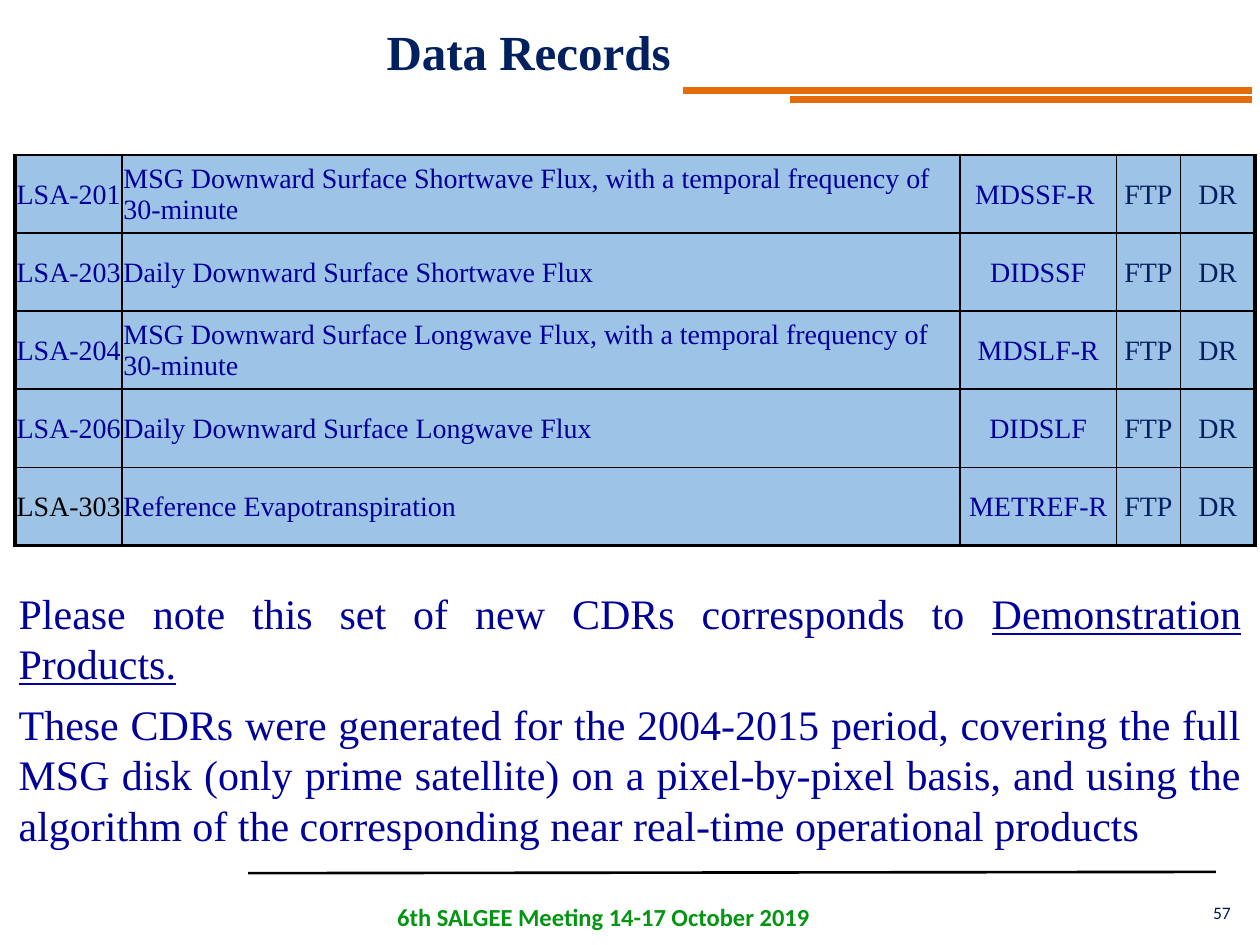
from dataclasses import dataclass

from lxml import etree
from pptx import Presentation, util as u
from pptx.dml.color import RGBColor
from pptx.enum import shapes, text
from pptx.oxml import ns


@dataclass(frozen=True)
class Theme:
    serif: str = "Times New Roman"
    sans: str = "Calibri"
    navy: str = "002060"
    blue: str = "000099"
    black: str = "000000"
    orange: str = "E46C0A"
    green: str = "059513"
    number: str = "00194C"
    cell: str = "9DC3E6"
    title_size: int = 28
    body_size: int = 24
    table_size: int = 16
    footer_size: int = 14
    number_size: int = 10
    thin: float = 1
    thick: float = 2.25


THEME = Theme()
ALIGN = text.PP_ALIGN
COLUMN_WIDTHS = (0.85, 6.65, 1.24, 0.51, 0.59)
ROW_HEIGHT = 0.62
RECORDS = (
    ("LSA-201", "MSG Downward Surface Shortwave Flux, with a temporal frequency of 30-minute", "MDSSF-R "),
    ("LSA-203", "Daily Downward Surface Shortwave Flux", "DIDSSF"),
    ("LSA-204", "MSG Downward Surface Longwave Flux, with a temporal frequency of 30-minute", "MDSLF-R"),
    ("LSA-206", "Daily Downward Surface Longwave Flux", "DIDSLF"),
    ("LSA-303", "Reference Evapotranspiration", "METREF-R"),
)
NOTES = (
    (("Please note this set of new CDRs corresponds to ", False), ("Demonstration Products.", True)),
    (("These CDRs were generated for the 2004-2015 period, covering the full MSG disk "
      "(only prime satellite) on a pixel-by-pixel basis, and using the algorithm of the "
      "corresponding near real-time operational products ", False),),
)


def style_font(font, name, size, color, bold=False):
    font.name = name
    font.size = u.Pt(size)
    font.color.rgb = RGBColor.from_string(color)
    font.bold = bold


def add_box(page, left, top, width, height, wrap=True):
    box = page.shapes.add_textbox(*map(u.Inches, (left, top, width, height)))
    box.text_frame.word_wrap = wrap
    return box.text_frame


def add_label(page, place, words, font, align=ALIGN.CENTER, wrap=True):
    frame = add_box(page, *place, wrap=wrap)
    frame.text = words
    para = frame.paragraphs[0]
    para.alignment = align
    style_font(para.runs[0].font, *font)


def add_rule(page, start, end, color, width):
    rule = page.shapes.add_connector(
        shapes.MSO_CONNECTOR.STRAIGHT, *map(u.Inches, start + end))
    rule.line.color.rgb = RGBColor.from_string(color)
    rule.line.width = u.Pt(width)
    etree.SubElement(rule._element.spPr, ns.qn("a:effectLst"))


def set_borders(cell, widths):
    properties = cell._tc.get_or_add_tcPr()
    for index, (side, width) in enumerate(widths.items()):
        border = etree.Element(ns.qn(f"a:ln{side}"), w=str(u.Pt(width)))
        fill = etree.SubElement(border, ns.qn("a:solidFill"))
        etree.SubElement(fill, ns.qn("a:srgbClr"), val=THEME.black)
        properties.insert(index, border)


def fill_cell(cell, words, color, align):
    cell.text = words
    cell.vertical_anchor = text.MSO_ANCHOR.MIDDLE
    cell.margin_left = cell.margin_top = cell.margin_right = u.Inches(0.01)
    cell.margin_bottom = 0
    cell.fill.solid()
    cell.fill.fore_color.rgb = RGBColor.from_string(THEME.cell)
    para = cell.text_frame.paragraphs[0]
    para.alignment = align
    style_font(para.runs[0].font, THEME.serif, THEME.table_size, color)


def add_records(page):
    row_count, column_count = len(RECORDS), len(COLUMN_WIDTHS)
    table = page.shapes.add_table(
        row_count, column_count, u.Inches(0.12), u.Inches(1.23),
        u.Inches(sum(COLUMN_WIDTHS)), u.Inches(ROW_HEIGHT * row_count)).table
    table.first_row = table.horz_banding = False
    for column, width in zip(table.columns, COLUMN_WIDTHS):
        column.width = u.Inches(width)
    for row_index, record in enumerate(RECORDS):
        table.rows[row_index].height = u.Inches(ROW_HEIGHT)
        last_row = row_index == row_count - 1
        id_color = THEME.black if last_row else THEME.blue
        colors = (id_color, THEME.blue, THEME.blue, THEME.navy, THEME.navy)
        for index, words in enumerate(record + ("FTP", "DR")):
            cell = table.cell(row_index, index)
            align = ALIGN.LEFT if index == 1 else ALIGN.CENTER
            fill_cell(cell, words, colors[index], align)
            set_borders(cell, {
                "L": THEME.thick if index == 0 else THEME.thin,
                "R": THEME.thick if index == column_count - 1 else THEME.thin,
                "T": THEME.thin,
                "B": THEME.thick if last_row else THEME.thin,
            })


def add_notes(page):
    frame = add_box(page, 0.05, 4.61, 9.9, 2.2)
    for index, spans in enumerate(NOTES):
        para = frame.add_paragraph() if index else frame.paragraphs[0]
        para.alignment = ALIGN.JUSTIFY
        para.space_before = u.Pt(6 if index else 0)
        for words, underlined in spans:
            span = para.add_run()
            span.text = words
            style_font(span.font, THEME.serif, THEME.body_size, THEME.blue)
            span.font.underline = underlined


def main():
    deck = Presentation()
    deck.slide_width, deck.slide_height = u.Inches(10), u.Inches(7.5)
    page = deck.slides.add_slide(deck.slide_layouts[6])
    add_rule(page, (6.27, 0.79), (9.94, 0.79), THEME.orange, 4)
    add_rule(page, (5.42, 0.72), (9.94, 0.72), THEME.orange, 4)
    add_label(page, (2.83, 7.11, 3.92, 0.34), "6th SALGEE Meeting 14-17 October 2019",
              (THEME.sans, THEME.footer_size, THEME.green, True))
    add_label(page, (9.53, 7.11, 0.36, 0.27), "57",
              (THEME.sans, THEME.number_size, THEME.number), ALIGN.LEFT, wrap=False)
    add_rule(page, (1.97, 6.93), (9.65, 6.92), THEME.black, 1.5)
    add_records(page)
    add_notes(page)
    add_label(page, (0.27, 0.12, 7.85, 0.57), "Data Records",
              (THEME.serif, THEME.title_size, THEME.navy, True))
    deck.save("out.pptx")


if __name__ == "__main__":
    main()
